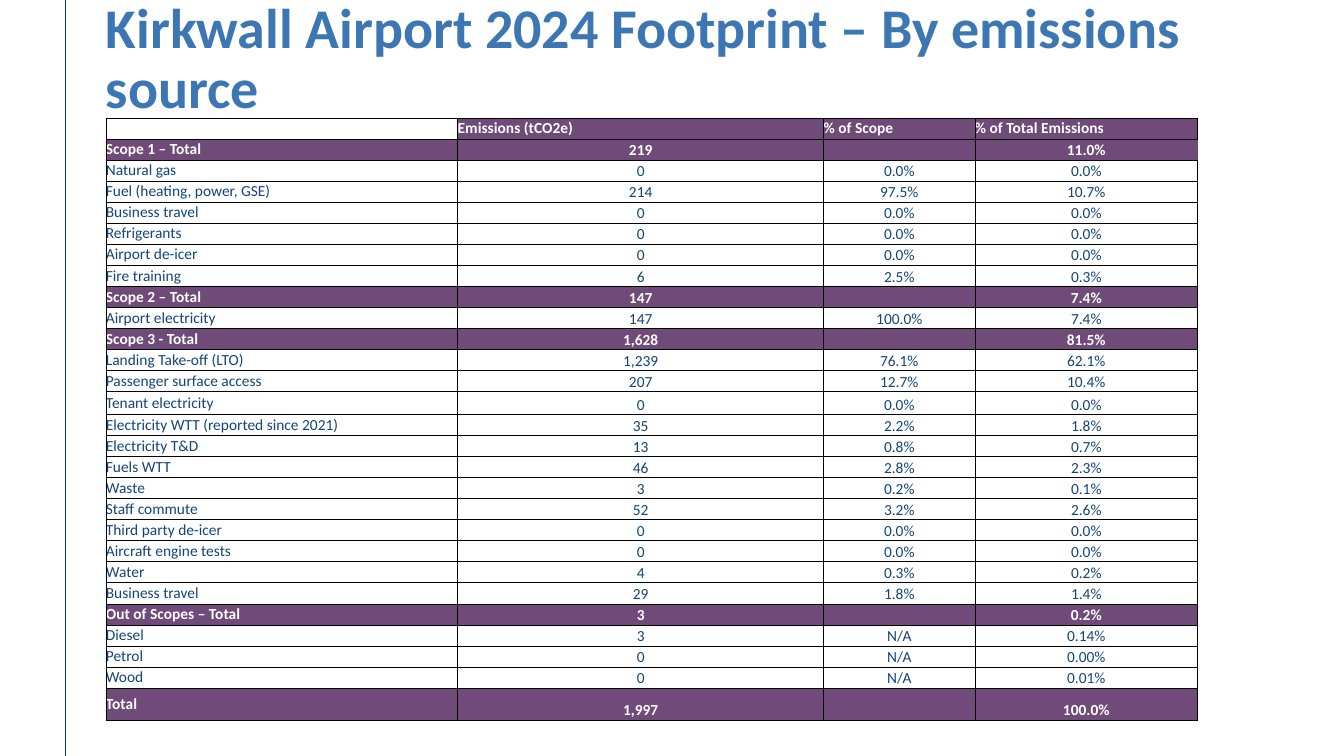
from lxml import etree
from pptx import Presentation
from pptx.dml.color import RGBColor
from pptx.enum.shapes import MSO_CONNECTOR
from pptx.enum.text import MSO_ANCHOR, PP_ALIGN
from pptx.oxml.ns import qn
from pptx.util import Inches, Pt

STRAIGHT = MSO_CONNECTOR.STRAIGHT
TOP, MIDDLE, BOTTOM = MSO_ANCHOR.TOP, MSO_ANCHOR.MIDDLE, MSO_ANCHOR.BOTTOM
LEFT, CENTER = PP_ALIGN.LEFT, PP_ALIGN.CENTER

# Content
TITLE = "Kirkwall Airport 2024 Footprint – By emissions source"
ROWS = [
    ("", "Emissions (tCO2e)", "% of Scope", "% of Total Emissions"),
    ("Scope 1 – Total", "219", "", "11.0%"),
    ("Natural gas", "0", "0.0%", "0.0%"),
    ("Fuel (heating, power, GSE)", "214", "97.5%", "10.7%"),
    ("Business travel", "0", "0.0%", "0.0%"),
    ("Refrigerants", "0", "0.0%", "0.0%"),
    ("Airport de-icer", "0", "0.0%", "0.0%"),
    ("Fire training", "6", "2.5%", "0.3%"),
    ("Scope 2 – Total", "147", "", "7.4%"),
    ("Airport electricity", "147", "100.0%", "7.4%"),
    ("Scope 3 - Total", "1,628", "", "81.5%"),
    ("Landing Take-off (LTO)", "1,239", "76.1%", "62.1%"),
    ("Passenger surface access", "207", "12.7%", "10.4%"),
    ("Tenant electricity", "0", "0.0%", "0.0%"),
    ("Electricity WTT (reported since 2021)", "35", "2.2%", "1.8%"),
    ("Electricity T&D", "13", "0.8%", "0.7%"),
    ("Fuels WTT", "46", "2.8%", "2.3%"),
    ("Waste", "3", "0.2%", "0.1%"),
    ("Staff commute", "52", "3.2%", "2.6%"),
    ("Third party de-icer", "0", "0.0%", "0.0%"),
    ("Aircraft engine tests", "0", "0.0%", "0.0%"),
    ("Water", "4", "0.3%", "0.2%"),
    ("Business travel", "29", "1.8%", "1.4%"),
    ("Out of Scopes – Total", "3", "", "0.2%"),
    ("Diesel", "3", "N/A", "0.14%"),
    ("Petrol", "0", "N/A", "0.00%"),
    ("Wood", "0", "N/A", "0.01%"),
    ("Total", "1,997", "", "100.0%"),
]

# Layout and format
LEFT_EDGE, TABLE_TOP, TABLE_HEIGHT = 1.05, 1.17, 5.98
COL_WIDTHS = [3.49, 3.63, 1.5, 2.21]
TALL_ROWS = {13: 0.23, 27: 0.32}
ROW_HEIGHT = (TABLE_HEIGHT - sum(TALL_ROWS.values())) / (len(ROWS) - len(TALL_ROWS))
BLUE = RGBColor(0x3C, 0x77, 0xB3)
NAVY = RGBColor(0x12, 0x44, 0x7D)
RULE = RGBColor(0x02, 0x36, 0x71)
PURPLE = RGBColor(0x70, 0x4A, 0x79)
WHITE = RGBColor(0xFF, 0xFF, 0xFF)
BLACK = RGBColor(0, 0, 0)
NO_MARGINS = dict.fromkeys(
    ("margin_left", "margin_top", "margin_right", "margin_bottom"), 0)


def set_attrs(obj, values):
    for name, value in values.items():
        setattr(obj, name, value)


def write(p, text, size, color, bold):
    r = p.add_run()
    r.text = text
    set_attrs(r.font, {"name": "Calibri", "size": Pt(size), "bold": bold})
    r.font.color.rgb = color


def set_borders(cell, open_sides=()):
    tcPr = cell._tc.get_or_add_tcPr()
    for side in "LRTB":
        ln = etree.SubElement(tcPr, qn(f"a:ln{side}"), w=str(Pt(0.5)))
        if side in open_sides:
            etree.SubElement(ln, qn("a:noFill"))
        else:
            fill = etree.SubElement(ln, qn("a:solidFill"))
            etree.SubElement(fill, qn("a:srgbClr"), val=str(BLACK))


def fill_cell(cell, text, row, col):
    header = row == 0
    strong = header or "Total" in ROWS[row][0]
    set_borders(cell, "R" if (row, col) == (1, 3) else "")
    if strong and (row, col) != (0, 0):
        cell.fill.solid()
        cell.fill.fore_color.rgb = PURPLE
    else:
        cell.fill.background()
    label = header or col == 0
    set_attrs(cell, {**NO_MARGINS, "vertical_anchor": MIDDLE if label else BOTTOM})
    p = cell.text_frame.paragraphs[0]
    p.alignment = LEFT if label else CENTER
    if text:
        write(p, text, 11, WHITE if strong else NAVY, strong)
    else:  # keeps an empty cell from stretching its row
        etree.SubElement(p._p, qn("a:endParaRPr"), sz="1100")


prs = Presentation()
prs.slide_width, prs.slide_height = Inches(13.33), Inches(7.5)
s = prs.slides.add_slide(prs.slide_layouts[6])

# Vertical rule
rule = s.shapes.add_connector(STRAIGHT, Inches(0.65), 0, Inches(0.65), prs.slide_height)
rule.line.color.rgb = RULE
rule.line.width = Pt(1)
etree.SubElement(rule._element.spPr, qn("a:effectLst"))

# Title
sp = s.shapes.add_textbox(Inches(LEFT_EDGE), 0, Inches(11.97), Inches(1.06))
tf = sp.text_frame
set_attrs(tf, {**NO_MARGINS, "word_wrap": True, "vertical_anchor": TOP})
p = tf.paragraphs[0]
p.line_spacing = 0.9
write(p, TITLE, 40, BLUE, True)

# Emissions table
table = s.shapes.add_table(
    len(ROWS), len(COL_WIDTHS), Inches(LEFT_EDGE), Inches(TABLE_TOP),
    Inches(sum(COL_WIDTHS)), Inches(TABLE_HEIGHT)).table
set_attrs(table, {"first_row": False, "horz_banding": False})
for col, width in enumerate(COL_WIDTHS):
    table.columns[col].width = Inches(width)
for row, texts in enumerate(ROWS):
    table.rows[row].height = Inches(TALL_ROWS.get(row, ROW_HEIGHT))
    for col, text in enumerate(texts):
        fill_cell(table.cell(row, col), text, row, col)

prs.save("out.pptx")
